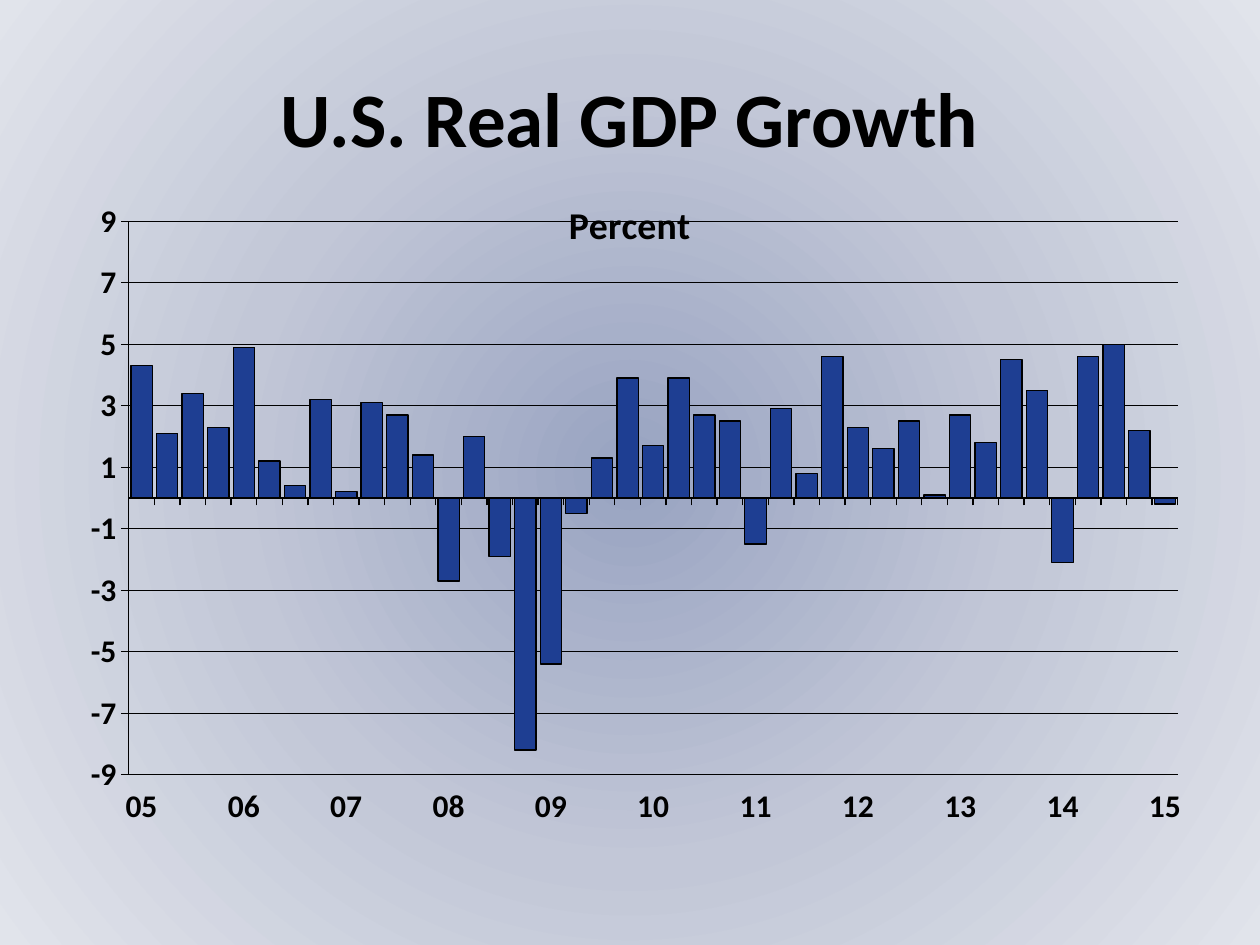
from lxml import etree
from pptx import Presentation
from pptx.chart.data import CategoryChartData
from pptx.dml.color import RGBColor
from pptx.enum import chart as charts, text
from pptx.oxml import parse_xml
from pptx.oxml.ns import nsdecls, qn
from pptx.util import Inches, Pt

# Content
TITLE = "U.S. Real GDP Growth"
UNIT = "Percent"
FIRST_YEAR = 5
GROWTH = [
    4.3, 2.1, 3.4, 2.3, 4.9, 1.2, 0.4, 3.2, 0.2, 3.1, 2.7, 1.4,
    -2.7, 2, -1.9, -8.2, -5.4, -0.5, 1.3, 3.9, 1.7, 3.9, 2.7, 2.5,
    -1.5, 2.9, 0.8, 4.6, 2.3, 1.6, 2.5, 0.1, 2.7, 1.8, 4.5, 3.5,
    -2.1, 4.6, 5, 2.2, -0.2,
]
QUARTERS = 4
FONT = "Calibri"
COLORS = {"ink": "000000", "bar": "1E3E92"}
BACKGROUND = [(0, "98A3C1"), (50, "C2C7D7"), (100, "E1E4EB")]


def style_font(font, size):
    font.name, font.size, font.bold = FONT, Pt(size), True
    font.color.rgb = RGBColor.from_string(COLORS["ink"])


def style_line(line):
    line.color.rgb = RGBColor.from_string(COLORS["ink"])
    line.width = Pt(0.75)


def place(parent, index, **settings):
    """Give a chart part a manual layout, as fractions of the chart."""
    for old in parent.findall(qn("c:layout")):
        parent.remove(old)
    layout = parse_xml(f"<c:layout {nsdecls('c')}><c:manualLayout/></c:layout>")
    for name, value in settings.items():
        etree.SubElement(layout[0], qn(f"c:{name}")).set("val", str(value))
    parent.insert(index, layout)


deck = Presentation()
deck.slide_width, deck.slide_height = Inches(10), Inches(7.5)
page = deck.slides.add_slide(deck.slide_layouts[6])

# Radial background
page.background.fill.gradient()
gradient = page.element.find(".//" + qn("a:gradFill"))
stops = "".join(
    f'<a:gs pos="{position * 1000}"><a:srgbClr val="{color}"/></a:gs>'
    for position, color in BACKGROUND
)
gradient.getparent().replace(gradient, parse_xml(
    f'<a:gradFill {nsdecls("a")} rotWithShape="1"><a:gsLst>{stops}</a:gsLst>'
    '<a:path path="circle"><a:fillToRect l="50000" t="50000" r="50000" b="50000"/>'
    "</a:path></a:gradFill>"
))

# Title
box = page.shapes.add_textbox(Inches(0.5), Inches(0.3), Inches(9), Inches(1.25))
frame = box.text_frame
frame.word_wrap = True
frame.vertical_anchor = text.MSO_ANCHOR.MIDDLE
frame.text = TITLE
frame.paragraphs[0].alignment = text.PP_ALIGN.CENTER
style_font(frame.paragraphs[0].runs[0].font, 44)

# Chart data: only the first quarter of each year is labelled
data = CategoryChartData()
data.categories = [
    "" if i % QUARTERS else f"{FIRST_YEAR + i // QUARTERS:02d}"
    for i in range(len(GROWTH))
]
data.add_series("Series 1", GROWTH)
chart = page.shapes.add_chart(
    charts.XL_CHART_TYPE.COLUMN_CLUSTERED,
    Inches(0.5), Inches(1.25), Inches(9), Inches(5.45), data,
).chart
style_font(chart.font, 18)
chart.has_legend = False

# Chart title laid over the plot
heading = chart.chart_title
heading.text_frame.text = UNIT
style_font(heading.text_frame.paragraphs[0].runs[0].font, 21.6)
heading_xml = chart.element.find(".//" + qn("c:title"))
heading_xml.find(qn("c:overlay")).set("val", "1")
place(heading_xml, 1, xMode="edge", yMode="edge", x=0.44, y=0.05)
place(chart.element.find(".//" + qn("c:plotArea")), 0, layoutTarget="inner",
      xMode="edge", yMode="edge", x=0.058, y=0.093, w=0.925, h=0.806)

# Columns
plot = chart.plots[0]
plot.gap_width, plot.overlap = 20, 70
plot.vary_by_categories = False
columns = plot.series[0]
columns.invert_if_negative = False
columns.format.fill.solid()
columns.format.fill.fore_color.rgb = RGBColor.from_string(COLORS["bar"])
style_line(columns.format.line)

# Axes
years, percent = chart.category_axis, chart.value_axis
for axis in (years, percent):
    axis.major_tick_mark = charts.XL_TICK_MARK.OUTSIDE
    axis.minor_tick_mark = charts.XL_TICK_MARK.NONE
    style_line(axis.format.line)
years.tick_label_position = charts.XL_TICK_LABEL_POSITION.LOW
last = years._element.find(qn("c:noMultiLvlLbl"))
for name, step in (("tickLblSkip", QUARTERS), ("tickMarkSkip", 1)):
    last.addprevious(parse_xml(f'<c:{name} {nsdecls("c")} val="{step}"/>'))
percent.minimum_scale, percent.maximum_scale, percent.major_unit = -9, 9, 2
percent.has_major_gridlines = True
style_line(percent.major_gridlines.format.line)

deck.save("out.pptx")
